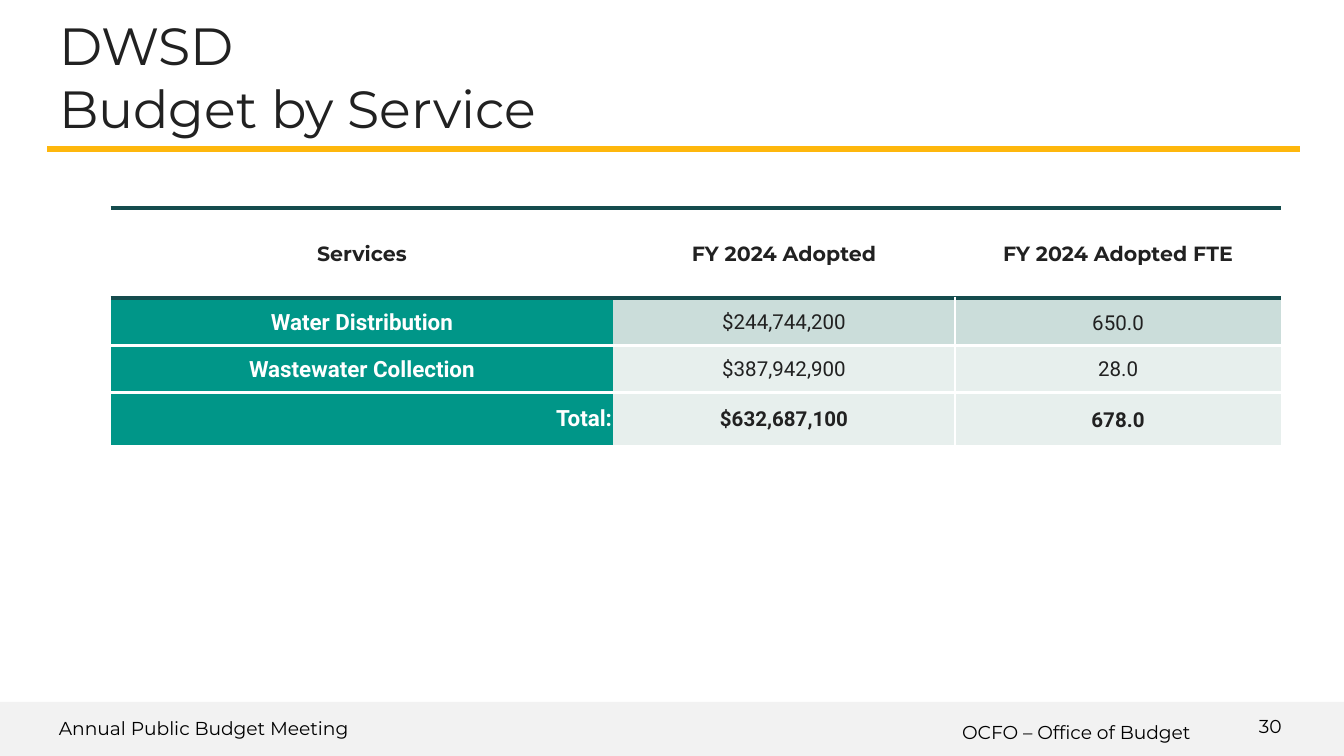
import pptx
import pptx.dml.color
import pptx.enum.shapes
import pptx.enum.text
import pptx.oxml
import pptx.oxml.ns
import pptx.util

Pt = pptx.util.Pt
ALIGN = pptx.enum.text.PP_ALIGN
ANCHOR = pptx.enum.text.MSO_ANCHOR

COLORS = {
    "ink": "212121",
    "black": "000000",
    "white": "FFFFFF",
    "gold": "FEB70D",
    "footer": "F2F2F2",
    "rule": "154C4D",
    "service": "009688",
    "band_dark": "CBDDDA",
    "band_light": "E7EFED",
}
COLUMN_WIDTHS = [269.3, 182.9, 175]
ROW_HEIGHTS = [48.24, 25.2, 25.2, 28.08]
ROWS = [
    ["Services", "FY 2024 Adopted", "FY 2024 Adopted FTE"],
    ["Water Distribution", "$244,744,200", "650.0"],
    ["Wastewater Collection", "$387,942,900", "28.0"],
    ["Total:", "$632,687,100", "678.0"],
]
HEAVY = ("rule", 2.25)
THIN = ("white", 1.5)


def rgb(name):
    return pptx.dml.color.RGBColor.from_string(COLORS[name])


def format_font(font, color, **values):
    for name, value in values.items():
        setattr(font, name, value)
    font.color.rgb = rgb(color)


def format_frame(frame, anchor):
    values = {"word_wrap": True, "vertical_anchor": anchor,
              "auto_size": pptx.enum.text.MSO_AUTO_SIZE.NONE}
    for side in ("left", "top", "right", "bottom"):
        values["margin_" + side] = Pt(7.2)
    for name, value in values.items():
        setattr(frame, name, value)


def add_label(slide, text, left, top, width, height, anchor=ANCHOR.TOP):
    box = slide.shapes.add_textbox(Pt(left), Pt(top), Pt(width), Pt(height))
    format_frame(box.text_frame, anchor)
    paragraph = box.text_frame.paragraphs[0]
    paragraph.text = text
    format_font(paragraph.font, "black", name="Montserrat", size=Pt(10))


def add_footer_band(slide):
    band = slide.shapes.add_shape(
        pptx.enum.shapes.MSO_SHAPE.RECTANGLE, Pt(0), Pt(376), Pt(720), Pt(29))
    band.shadow.inherit = False
    band.fill.solid()
    band.fill.fore_color.rgb = rgb("footer")
    band.line.fill.background()


def add_title_rule(slide):
    rule = slide.shapes.add_connector(
        pptx.enum.shapes.MSO_CONNECTOR.STRAIGHT, Pt(25.2), Pt(79.9), Pt(696.2), Pt(79.9))
    rule.line.color.rgb = rgb("gold")
    rule.line.width = Pt(3)
    rule._element.spPr.append(pptx.oxml.parse_xml(
        "<a:effectLst %s/>" % pptx.oxml.ns.nsdecls("a")))


def format_title(slide, text):
    title = slide.shapes.title
    title.left, title.top, title.width, title.height = Pt(24.5), Pt(0), Pt(671), Pt(79.9)
    format_frame(title.text_frame, ANCHOR.TOP)
    paragraph = title.text_frame.paragraphs[0]
    paragraph.text = text
    paragraph.alignment = ALIGN.LEFT
    paragraph.line_spacing = 1.0
    format_font(paragraph.font, "ink", name="Montserrat", size=Pt(28))


def set_borders(cell, borders):
    """Draw the given sides (L, R, T, B) and clear the others."""
    properties = cell._tc.get_or_add_tcPr()
    for index, side in enumerate("LRTB"):
        color, width = borders.get(side) or (None, 0)
        paint = ('<a:solidFill><a:srgbClr val="%s"/></a:solidFill>' % COLORS[color]
                 if color else "<a:noFill/>")
        properties.insert(index, pptx.oxml.parse_xml(
            '<a:ln%s %s w="%d">%s</a:ln%s>'
            % (side, pptx.oxml.ns.nsdecls("a"), Pt(width), paint, side)))


def cell_borders(row, column):
    borders = {"T": HEAVY if row < 2 else THIN}
    if row < len(ROWS) - 1:
        borders["B"] = HEAVY if row == 0 else THIN
    if row and column:
        borders["R" if column == 1 else "L"] = THIN
    return borders


def format_cell(cell, row, column):
    header, total, service = row == 0, row == len(ROWS) - 1, row > 0 and column == 0
    for side, margin in zip(("left", "top", "right", "bottom"), (0.7, 0.7, 0.7, 0)):
        setattr(cell, "margin_" + side, Pt(margin))
    cell.vertical_anchor = ANCHOR.MIDDLE
    if header:
        cell.fill.background()
    else:
        cell.fill.solid()
        band = "band_dark" if row == 1 else "band_light"
        cell.fill.fore_color.rgb = rgb("service" if service else band)
    set_borders(cell, cell_borders(row, column))

    paragraph = cell.text_frame.paragraphs[0]
    paragraph.text = ROWS[row][column]
    paragraph.alignment = ALIGN.RIGHT if service and total else ALIGN.CENTER
    if column == 2 and row in (1, 3):
        paragraph.line_spacing = 1.07
    format_font(paragraph.runs[0].font, "white" if service else "ink",
                name="Montserrat" if header else "Roboto",
                size=Pt(12 if service else 11),
                bold=header or total or service)


def add_budget_table(slide):
    table = slide.shapes.add_table(
        len(ROWS), len(COLUMN_WIDTHS), Pt(59.3), Pt(111.6),
        Pt(sum(COLUMN_WIDTHS)), Pt(sum(ROW_HEIGHTS))).table
    table.first_row = table.horz_banding = False
    for column, width in zip(table.columns, COLUMN_WIDTHS):
        column.width = Pt(width)
    for row, height in zip(table.rows, ROW_HEIGHTS):
        row.height = Pt(height)
    for row in range(len(ROWS)):
        for column in range(len(COLUMN_WIDTHS)):
            format_cell(table.cell(row, column), row, column)


def main():
    presentation = pptx.Presentation()
    presentation.slide_width, presentation.slide_height = Pt(720), Pt(405)
    slide = presentation.slides.add_slide(presentation.slide_layouts[5])
    add_footer_band(slide)
    add_label(slide, "OCFO – Office of Budget", 508.3, 378.7, 242, 26)
    add_label(slide, "Annual Public Budget Meeting", 24.5, 376.6, 288, 19.5)
    add_title_rule(slide)
    format_title(slide, "DWSD\vBudget by Service")
    add_label(slide, "30", 667.4, 373.7, 43.2, 31, ANCHOR.MIDDLE)
    add_budget_table(slide)
    presentation.save("out.pptx")


if __name__ == "__main__":
    main()
